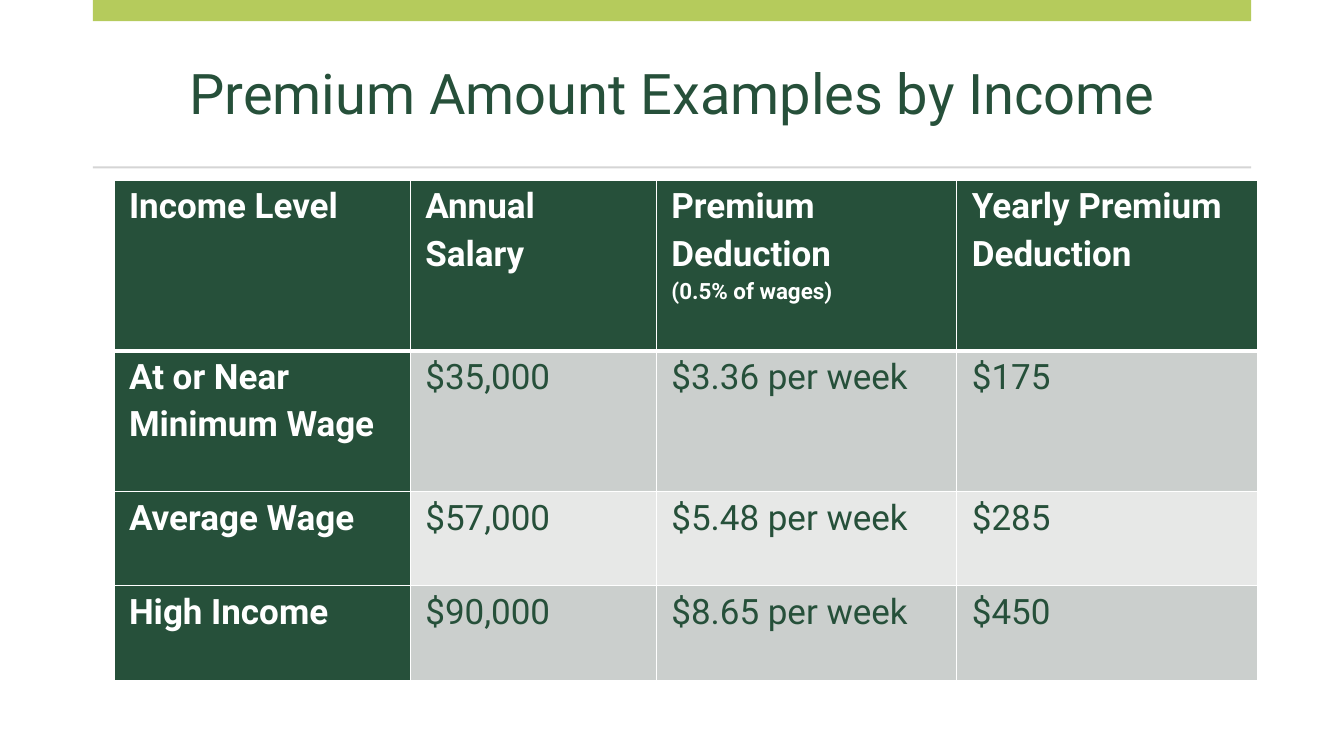
"""Build the slide of premium amount examples by income."""
from lxml.etree import SubElement
from pptx import Presentation
from pptx.dml.color import RGBColor
from pptx.enum.shapes import MSO_SHAPE
from pptx.enum.text import MSO_ANCHOR, PP_ALIGN
from pptx.oxml.ns import qn
from pptx.util import Inches, Pt

GREEN, WHITE = "26503A", "FFFFFF"
BANDS = ["CBCFCD", "E7E8E7"]
LEFT, WIDTH = Inches(0.92), Inches(11.49)


def color(value):
    return RGBColor.from_string(value)


def add_border(cell, side, points):
    line = SubElement(cell._tc.get_or_add_tcPr(), qn(f"a:ln{side}"), w=str(Pt(points)))
    SubElement(SubElement(line, qn("a:solidFill")), qn("a:srgbClr"), val=WHITE)


prs = Presentation()
prs.slide_width, prs.slide_height = Inches(13.33), Inches(7.5)
slide = prs.slides.add_slide(prs.slide_layouts[6])

title = slide.shapes.add_textbox(LEFT, Inches(0.37), WIDTH, Inches(1.18)).text_frame
title.word_wrap = True
title.vertical_anchor = MSO_ANCHOR.MIDDLE
heading = title.paragraphs[0]
heading.text = "Premium Amount Examples by Income"
heading.alignment = PP_ALIGN.CENTER
heading.line_spacing = 0.9
heading.font.name, heading.font.size = "Roboto", Pt(40)
heading.font.color.rgb = color(GREEN)

for top, height, fill in [(0, 0.21, "B5CB5C"), (1.65, 0.02, "D5D5D5")]:
    bar = slide.shapes.add_shape(
        MSO_SHAPE.RECTANGLE, LEFT, Inches(top), WIDTH, Inches(height))
    bar.shadow.inherit = False
    bar.fill.solid()
    bar.fill.fore_color.rgb = color(fill)
    bar.line.fill.background()

premiums = [
    ["Income Level", "Annual Salary", "Premium Deduction\n(0.5% of wages)",
     "Yearly Premium Deduction"],
    ["At or Near Minimum Wage", "$35,000", "$3.36 per week", "$175"],
    ["Average Wage", "$57,000", "$5.48 per week", "$285"],
    ["High Income", "$90,000", "$8.65 per week", "$450"],
]
column_widths = [2.94, 2.44, 2.98, 2.98]
row_heights = [1.69, 1.4, 0.93, 0.94]
table = slide.shapes.add_table(
    len(row_heights), len(column_widths), Inches(1.13), Inches(1.79),
    Inches(sum(column_widths)), Inches(sum(row_heights))).table
table.first_col = True
for column, width in zip(table.columns, column_widths):
    column.width = Inches(width)
for row, height in zip(table.rows, row_heights):
    row.height = Inches(height)

for r, values in enumerate(premiums):
    for c, value in enumerate(values):
        cell = table.cell(r, c)
        is_header = r == 0 or c == 0
        cell.margin_left = cell.margin_right = Inches(0.15)
        cell.margin_top = cell.margin_bottom = 0
        for side in "LRTB":
            under_header = (r, side) in [(0, "B"), (1, "T")]
            add_border(cell, side, 3 if under_header else 1)
        cell.fill.solid()
        cell.fill.fore_color.rgb = color(GREEN if is_header else BANDS[(r - 1) % 2])
        cell.text = value
        for p, paragraph in enumerate(cell.text_frame.paragraphs):
            paragraph.line_spacing = 1.15
            paragraph.font.name = "Roboto"
            paragraph.font.size = Pt(16 if p else 25)
            paragraph.font.bold = is_header
            paragraph.font.color.rgb = color(WHITE if is_header else GREEN)

prs.save("out.pptx")
